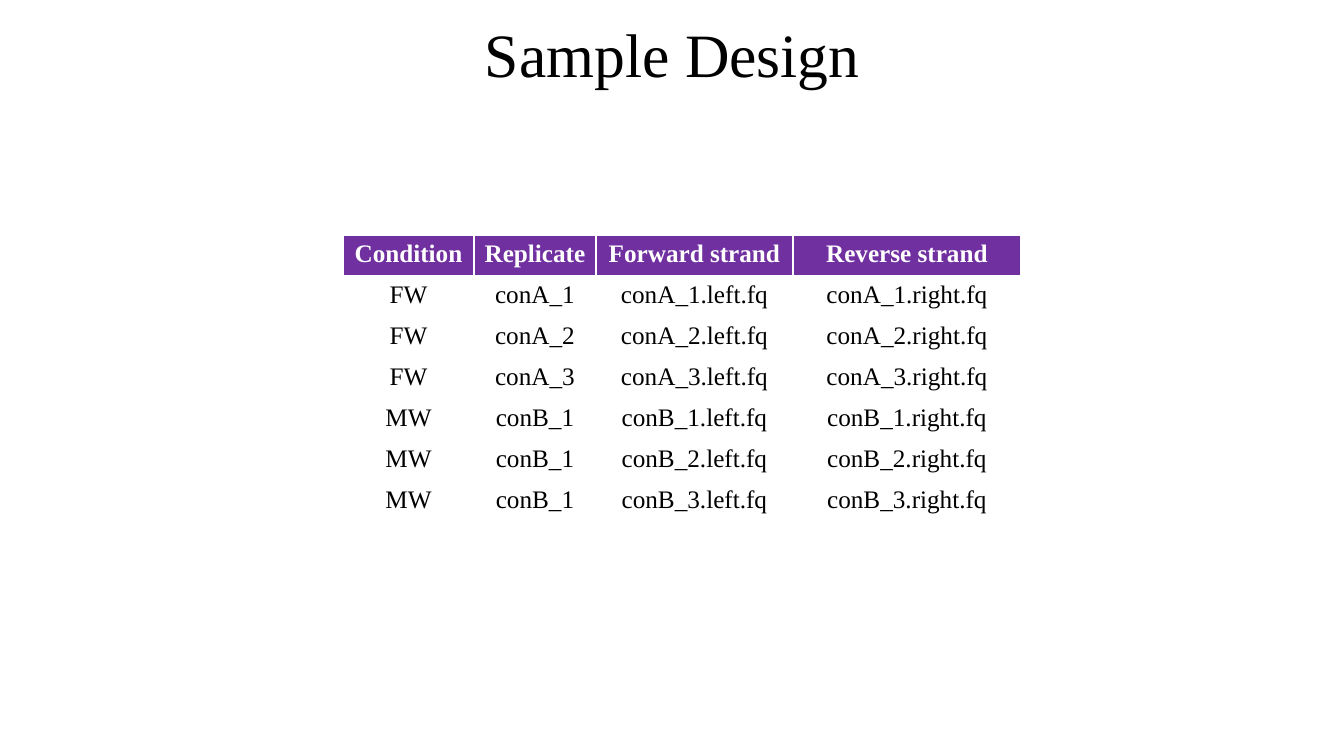
from pptx import Presentation
from pptx.dml.color import RGBColor
from pptx.enum.text import MSO_ANCHOR, PP_ALIGN
from pptx.util import Pt

CENTER = PP_ALIGN.CENTER
MIDDLE = MSO_ANCHOR.MIDDLE
EMU_PER_PX = 914400 / 100.8
FONT = "Times New Roman"
BLACK, WHITE, PURPLE = "000000", "FFFFFF", "7030A0"


def px(length):
    """Turn slide pixels into EMU."""
    return round(length * EMU_PER_PX)


def style(paragraph, size, color, bold=False):
    paragraph.alignment = CENTER
    paragraph.font.name = FONT
    paragraph.font.size = Pt(size)
    paragraph.font.bold = bold
    paragraph.font.color.rgb = RGBColor.from_string(color)


deck = Presentation()
deck.slide_width, deck.slide_height = px(1344), px(756)
page = deck.slides.add_slide(deck.slide_layouts[6])

# Title
title = page.shapes.add_textbox(px(93), px(8), px(1159), px(100)).text_frame
title.word_wrap = True
title.vertical_anchor = MIDDLE
title.text = "Sample Design"
title.paragraphs[0].line_spacing = 0.9
style(title.paragraphs[0], 44, BLACK)

# Sample table; the default table style supplies the white borders
column_widths = [131, 122, 197, 228]
row_height = 41
samples = [
    ("FW", "conA_1", "conA_1"),
    ("FW", "conA_2", "conA_2"),
    ("FW", "conA_3", "conA_3"),
    ("MW", "conB_1", "conB_1"),
    ("MW", "conB_1", "conB_2"),
    ("MW", "conB_1", "conB_3"),
]
rows = [("Condition", "Replicate", "Forward strand", "Reverse strand")]
for condition, replicate, reads in samples:
    rows.append((condition, replicate, f"{reads}.left.fq", f"{reads}.right.fq"))

table = page.shapes.add_table(
    len(rows), len(column_widths), px(343), px(235),
    px(sum(column_widths)), px(row_height * len(rows)),
).table
for column, width in zip(table.columns, column_widths):
    column.width = px(width)

for row_index, row in enumerate(rows):
    is_header = row_index == 0
    for column_index, text in enumerate(row):
        cell = table.cell(row_index, column_index)
        cell.fill.solid()
        cell.fill.fore_color.rgb = RGBColor.from_string(PURPLE if is_header else WHITE)
        cell.text = text
        style(cell.text_frame.paragraphs[0], 18, WHITE if is_header else BLACK, is_header)

deck.save("out.pptx")
